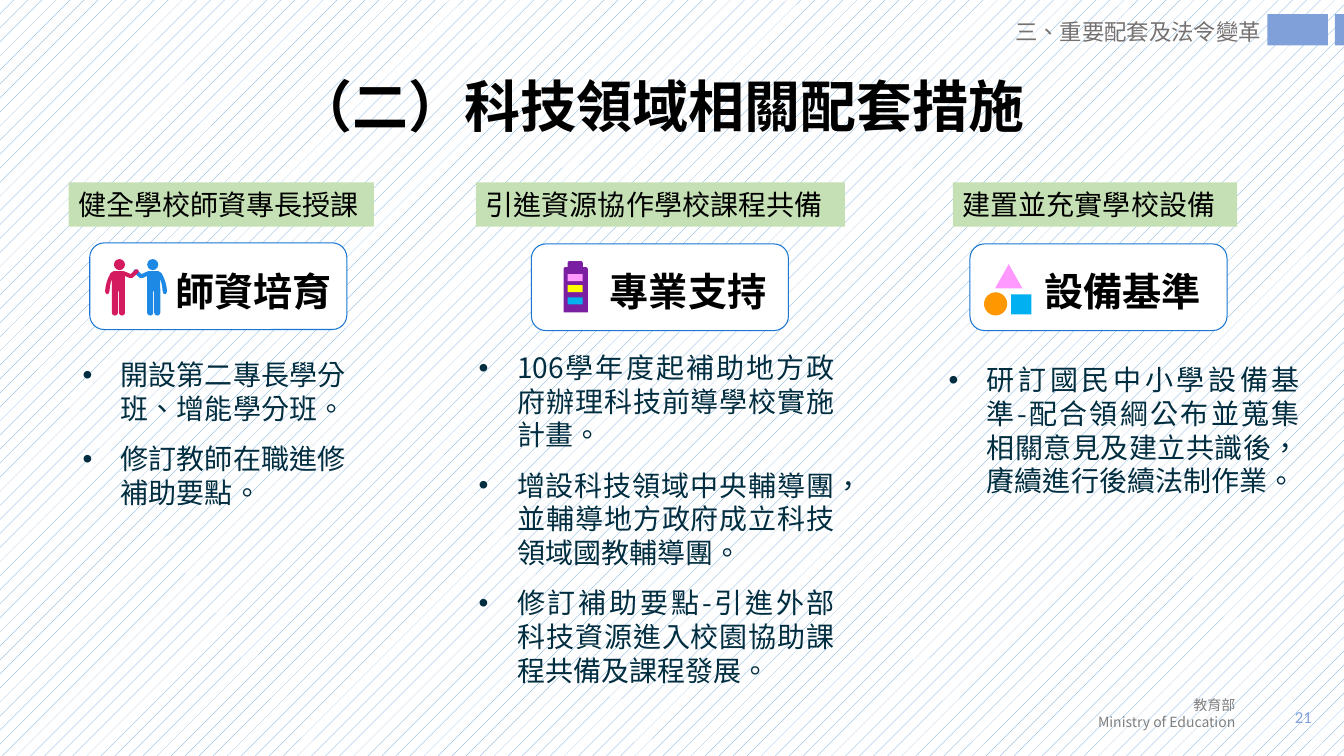
from lxml import etree
from pptx import Presentation
from pptx.dml.color import RGBColor
from pptx.enum.dml import MSO_PATTERN
from pptx.enum.shapes import MSO_SHAPE
from pptx.enum.text import MSO_ANCHOR, PP_ALIGN
from pptx.oxml.ns import qn
from pptx.util import Inches, Pt

RECT = MSO_SHAPE.RECTANGLE
ROUND = MSO_SHAPE.ROUNDED_RECTANGLE
TOP_ROUND = MSO_SHAPE.ROUND_2_SAME_RECTANGLE
OVAL = MSO_SHAPE.OVAL
DOT = MSO_SHAPE.FLOWCHART_CONNECTOR
PEAK = MSO_SHAPE.ISOSCELES_TRIANGLE
DOTS = MSO_PATTERN.PERCENT_5
MIDDLE, TOP = MSO_ANCHOR.MIDDLE, MSO_ANCHOR.TOP
LEFT, CENTER = PP_ALIGN.LEFT, PP_ALIGN.CENTER
RIGHT, JUSTIFY = PP_ALIGN.RIGHT, PP_ALIGN.JUSTIFY

BLACK = RGBColor(0x00, 0x00, 0x00)
WHITE = RGBColor(0xFF, 0xFF, 0xFF)
NAVY = RGBColor(0x00, 0x2D, 0x40)
GRAY = RGBColor(0x76, 0x71, 0x71)
SILVER = RGBColor(0x80, 0x80, 0x80)
STEEL = RGBColor(0x80, 0xA0, 0xDA)
GREEN = RGBColor(0xC5, 0xE0, 0xB4)
EDGE = RGBColor(0x19, 0x76, 0xD2)
BLUE = RGBColor(0x1E, 0x88, 0xE5)
RED = RGBColor(0xD4, 0x1B, 0x5F)
PURPLE = RGBColor(0x7B, 0x1F, 0xA2)
PINK = RGBColor(0xFF, 0x99, 0xFF)
YELLOW = RGBColor(0xFF, 0xFF, 0x00)
CYAN = RGBColor(0x00, 0xB0, 0xF0)
ORANGE = RGBColor(0xFF, 0x98, 0x00)
HAZE = RGBColor(0x5B, 0x9B, 0xD5)

ARM_START = (1.57, 2.73)
ARM_CURVES = [
    ((1.56, 2.71), (1.56, 2.7), (1.57, 2.7)),
    ((1.58, 2.69), (1.6, 2.7), (1.61, 2.71)),
    ((1.66, 2.82), (1.65, 2.89), (1.65, 2.9)),
    ((1.64, 2.91), (1.64, 2.92), (1.63, 2.92)),
    ((1.62, 2.92), (1.61, 2.91), (1.61, 2.9)),
    ((1.6, 2.86), (1.62, 2.81), (1.57, 2.73)),
]


def trace(start, curves, steps=6):
    points = [start]
    for one, two, end in curves:
        first = points[-1]
        for step in range(1, steps + 1):
            t = step / steps
            u = 1 - t
            points.append(tuple(
                u ** 3 * a + 3 * u * u * t * b + 3 * u * t * t * c + t ** 3 * d
                for a, b, c, d in zip(first, one, two, end)))
    return points


class Board:
    face = "Noto Sans CJK SC"

    def __init__(self, slide):
        self.slide = slide

    def paint(self, shape, fill, line=None, turn=0):
        shape.shadow.inherit = False
        shape.fill.solid()
        shape.fill.fore_color.rgb = fill
        shape.rotation = turn
        if line is None:
            shape.line.fill.background()
        else:
            shape.line.color.rgb = line
            shape.line.width = Pt(0.75)

    def block(self, kind, box, fill, line=None, turn=0, bend=()):
        shape = self.slide.shapes.add_shape(kind, *map(Inches, box))
        self.paint(shape, fill, line, turn)
        for spot, value in enumerate(bend):
            shape.adjustments[spot] = value
        return shape

    def curve(self, points, fill, turn):
        spots = [(Inches(x), Inches(y)) for x, y in points]
        pen = self.slide.shapes.build_freeform(*spots[0], scale=1.0)
        pen.add_line_segments(spots[1:], close=True)
        self.paint(pen.convert_to_shape(), fill, turn=turn)

    def words(self, shape, lines, size, color, align=LEFT, anchor=TOP,
              wrap=True, bold=False, face=None, bullet=False, pitch=None):
        frame = shape.text_frame
        frame.word_wrap = wrap
        frame.vertical_anchor = anchor
        name = face or self.face
        looks = {"size": Pt(size), "bold": bold, "name": name}
        form = {"alignment": align, "line_spacing": pitch}
        if bullet:
            form["space_after"] = Pt(12)
        for spot, line in enumerate(lines):
            para = frame.add_paragraph() if spot else frame.paragraphs[0]
            for key, value in form.items():
                setattr(para, key, value)
            run = para.add_run()
            run.text = line
            for key, value in looks.items():
                setattr(run.font, key, value)
            run.font.color.rgb = color
            props = run._r.get_or_add_rPr()
            props.set("lang", "zh-TW")
            etree.SubElement(props, qn("a:ea")).set("typeface", name)
            if bullet:
                props = para._p.get_or_add_pPr()
                props.set("marL", str(Inches(0.38)))
                props.set("indent", str(Inches(-0.38)))
                etree.SubElement(props, qn("a:buFont")).set("typeface", "Arial")
                etree.SubElement(props, qn("a:buChar")).set("char", "•")

    def text(self, box, lines, size, color, **style):
        shape = self.slide.shapes.add_textbox(*map(Inches, box))
        self.words(shape, lines, size, color, **style)

    def label(self, left, width, line):
        shape = self.block(RECT, (left, 1.81, width, 0.44), GREEN)
        self.words(shape, [line], 20, BLACK)

    def card(self, left, top, start, line):
        self.block(ROUND, (left, top, 2.55, 0.86), WHITE, EDGE)
        self.text((start, 2.6, 1.77, 0.57), [line], 28, BLACK,
                  wrap=False, bold=True)

    def person(self, fill, flip=False):
        axis = 2.7
        sign = -1 if flip else 1
        parts = [
            (DOT, (1.46, 2.57, 0.11, 0.11), 0, ()),
            (ROUND, (1.46, 2.69, 0.13, 0.2), 0, ()),
            (ROUND, (1.53, 2.84, 0.06, 0.29), 0, (0.5,)),
            (ROUND, (1.46, 2.84, 0.06, 0.29), 0, (0.5,)),
            (ROUND, (1.35, 2.66, 0.04, 0.11), -47.7, (0.5,)),
            (ROUND, (1.42, 2.67, 0.04, 0.11), 66.4, (0.5,)),
        ]
        for kind, (x, y, w, h), turn, bend in parts:
            left = axis - x - w if flip else x
            self.block(kind, (left, y, w, h), fill, turn=sign * turn, bend=bend)
        points = trace(ARM_START, ARM_CURVES)
        if flip:
            points = [(axis - x, y) for x, y in points]
        self.curve(points, fill, sign * -4.2)


def main():
    deck = Presentation()
    deck.slide_width, deck.slide_height = Inches(13.33), Inches(7.5)
    slide = deck.slides.add_slide(deck.slide_layouts[6])
    back = slide.background.fill
    back.patterned()
    back.pattern = DOTS
    back.fore_color.rgb = HAZE
    back.back_color.rgb = WHITE

    board = Board(slide)
    board.text((0.8, 0.36, 11.5, 1.45), ["（二）科技領域相關配套措施"], 40, BLACK,
               align=CENTER, anchor=MIDDLE, bold=True, pitch=0.9)
    for left, width in ((12.57, 0.6), (13.24, 0.09)):
        board.block(RECT, (left, 0.14, width, 0.31), STEEL)
    board.text((9.97, 0.13, 2.8, 0.64), ["三、重要配套及法令變革"], 16, GRAY)
    board.text((10.86, 6.96, 2.25, 0.3), ["21"], 12, STEEL,
               align=RIGHT, anchor=MIDDLE, face="Calibri")
    board.text((10.75, 6.86, 1.6, 0.44), ["教育部", "Ministry of Education"],
               10, SILVER, align=RIGHT, wrap=False)

    columns = [
        ((0.68, 3.03, "健全學校師資專長授課"), (0.89, 2.41, 1.64, "師資培育"),
         (0.72, 3.5, 2.89, 1.62), LEFT,
         ["開設第二專長學分班、增能學分班。", "修訂教師在職進修補助要點。"]),
        ((4.72, 3.66, "引進資源協作學校課程共備"), (5.27, 2.42, 5.95, "專業支持"),
         (4.65, 3.43, 3.73, 3.47), JUSTIFY,
         ["106學年度起補助地方政府辦理科技前導學校實施計畫。",
          "增設科技領域中央輔導團，並輔導地方政府成立科技領域國教輔導團。",
          "修訂補助要點-引進外部科技資源進入校園協助課程共備及課程發展。"]),
        ((9.45, 2.82, "建置並充實學校設備"), (9.62, 2.42, 10.26, "設備基準"),
         (9.31, 3.55, 3.68, 1.45), JUSTIFY,
         ["研訂國民中小學設備基準-配合領綱公布並蒐集相關意見及建立共識後，賡續進行後續法制作業。"]),
    ]
    for label, card, box, align, lines in columns:
        board.label(*label)
        board.card(*card)
        board.text(box, lines, 20, NAVY, align=align, bullet=True)

    board.person(BLUE)
    board.person(RED, flip=True)

    board.block(TOP_ROUND, (5.59, 2.65, 0.24, 0.45), PURPLE, bend=(0.08, 0))
    board.block(TOP_ROUND, (5.63, 2.59, 0.15, 0.11), PURPLE)
    for left_top, fill in zip((2.72, 2.83, 2.95), (PINK, YELLOW, CYAN)):
        board.block(RECT, (5.63, left_top, 0.15, 0.07), fill)

    board.block(PEAK, (9.87, 2.62, 0.27, 0.24), PINK)
    board.block(RECT, (10.03, 2.92, 0.2, 0.2), CYAN)
    board.block(OVAL, (9.76, 2.9, 0.23, 0.23), ORANGE)
    deck.save("out.pptx")


if __name__ == "__main__":
    main()
